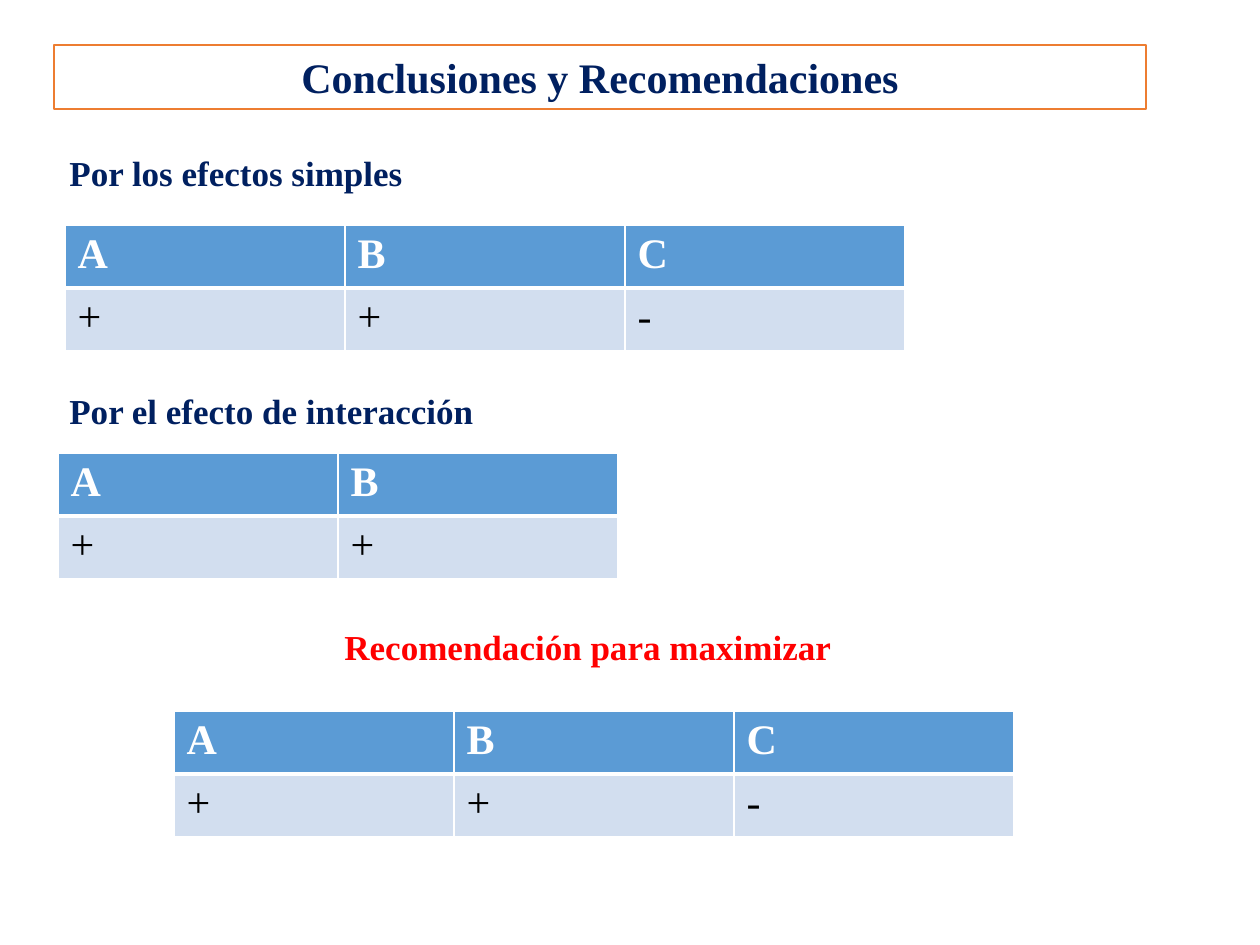
from dataclasses import dataclass

from lxml.etree import SubElement
from pptx import Presentation
from pptx.dml.color import RGBColor as Rgb
from pptx.enum.shapes import MSO_SHAPE as Shape
from pptx.enum.text import MSO_ANCHOR as Anchor, MSO_AUTO_SIZE as AutoSize, PP_ALIGN as Align
from pptx.oxml.ns import qn
from pptx.util import Emu, Pt


@dataclass(frozen=True)
class Theme:
    font: str = "Times New Roman"
    navy: str = "002060"
    red: str = "FF0000"
    orange: str = "ED7D31"
    header_fill: str = "5B9BD5"
    body_fill: str = "D2DEEF"
    white: str = "FFFFFF"
    black: str = "000000"
    large: int = 24
    medium: int = 20


class SlideBuilder:
    EMU_PER_PX = 914400 / 126
    COLUMN, ROW = 280, 63

    def __init__(self, slide, theme):
        self.slide, self.theme = slide, theme

    def px(self, *lengths):
        return [Emu(round(length * self.EMU_PER_PX)) for length in lengths]

    def add_text(self, frame, text, size, color, bold=True, align=None):
        paragraph = frame.paragraphs[0]
        paragraph.alignment = align
        run = paragraph.add_run()
        run.text = text
        formats = {"name": self.theme.font, "size": Pt(size), "bold": bold}
        for attribute, value in formats.items():
            setattr(run.font, attribute, value)
        run.font.color.rgb = Rgb.from_string(color)

    def title(self, text, *box):
        banner = self.slide.shapes.add_shape(Shape.RECTANGLE, *self.px(*box))
        banner.shadow.inherit = False
        banner.fill.background()
        banner.line.color.rgb = Rgb.from_string(self.theme.orange)
        banner.line.width = Pt(0.75)
        frame = banner.text_frame
        formats = {"word_wrap": True, "vertical_anchor": Anchor.MIDDLE,
                   "auto_size": AutoSize.SHAPE_TO_FIT_TEXT}
        for attribute, value in formats.items():
            setattr(frame, attribute, value)
        self.add_text(frame, text, self.theme.large, self.theme.navy, align=Align.CENTER)

    def heading(self, text, color, *box):
        frame = self.slide.shapes.add_textbox(*self.px(*box)).text_frame
        frame.word_wrap = True
        frame.auto_size = AutoSize.SHAPE_TO_FIT_TEXT
        self.add_text(frame, text, self.theme.medium, color)

    def borders(self, cell, widths):
        properties = cell._tc.get_or_add_tcPr()
        for side, width in widths.items():
            line = SubElement(properties, qn(f"a:ln{side}"), w=str(Pt(width)))
            fill = SubElement(line, qn("a:solidFill"))
            SubElement(fill, qn("a:srgbClr"), val=self.theme.white)

    def effects_table(self, signs, left, top):
        theme = self.theme
        rows = [list(signs), list(signs.values())]
        size = self.px(left, top, self.COLUMN * len(signs), self.ROW * len(rows))
        table = self.slide.shapes.add_table(len(rows), len(signs), *size).table
        # Header and body rows: fill, text colour, bold, border widths
        styles = [
            (theme.header_fill, theme.white, True, {"L": 1, "R": 1, "T": 1, "B": 3}),
            (theme.body_fill, theme.black, False, {"L": 1, "R": 1, "B": 1}),
        ]
        for r, (row, (fill, color, bold, widths)) in enumerate(zip(rows, styles)):
            for c, text in enumerate(row):
                cell = table.cell(r, c)
                self.borders(cell, widths)
                cell.fill.solid()
                cell.fill.fore_color.rgb = Rgb.from_string(fill)
                self.add_text(cell.text_frame, text, theme.large, color, bold)


def main():
    deck = Presentation()
    theme = Theme()
    builder = SlideBuilder(deck.slides.add_slide(deck.slide_layouts[6]), theme)
    deck.slide_width, deck.slide_height = builder.px(1260, 945)

    interaction = {"A": "+", "B": "+"}
    all_effects = {**interaction, "C": "-"}

    # Title
    builder.title("Conclusiones y Recomendaciones", 54, 45, 1092, 64)

    # Simple effects
    builder.heading("Por los efectos simples", theme.navy, 57, 145, 725, 55)
    builder.effects_table(all_effects, 65, 225)

    # Interaction effect
    builder.heading("Por el efecto de interacción", theme.navy, 57, 383, 592, 55)
    builder.effects_table(interaction, 58, 453)

    # Recommendation
    builder.heading("Recomendación para maximizar", theme.red, 332, 619, 655, 55)
    builder.effects_table(all_effects, 174, 711)

    deck.save("out.pptx")


if __name__ == "__main__":
    main()
